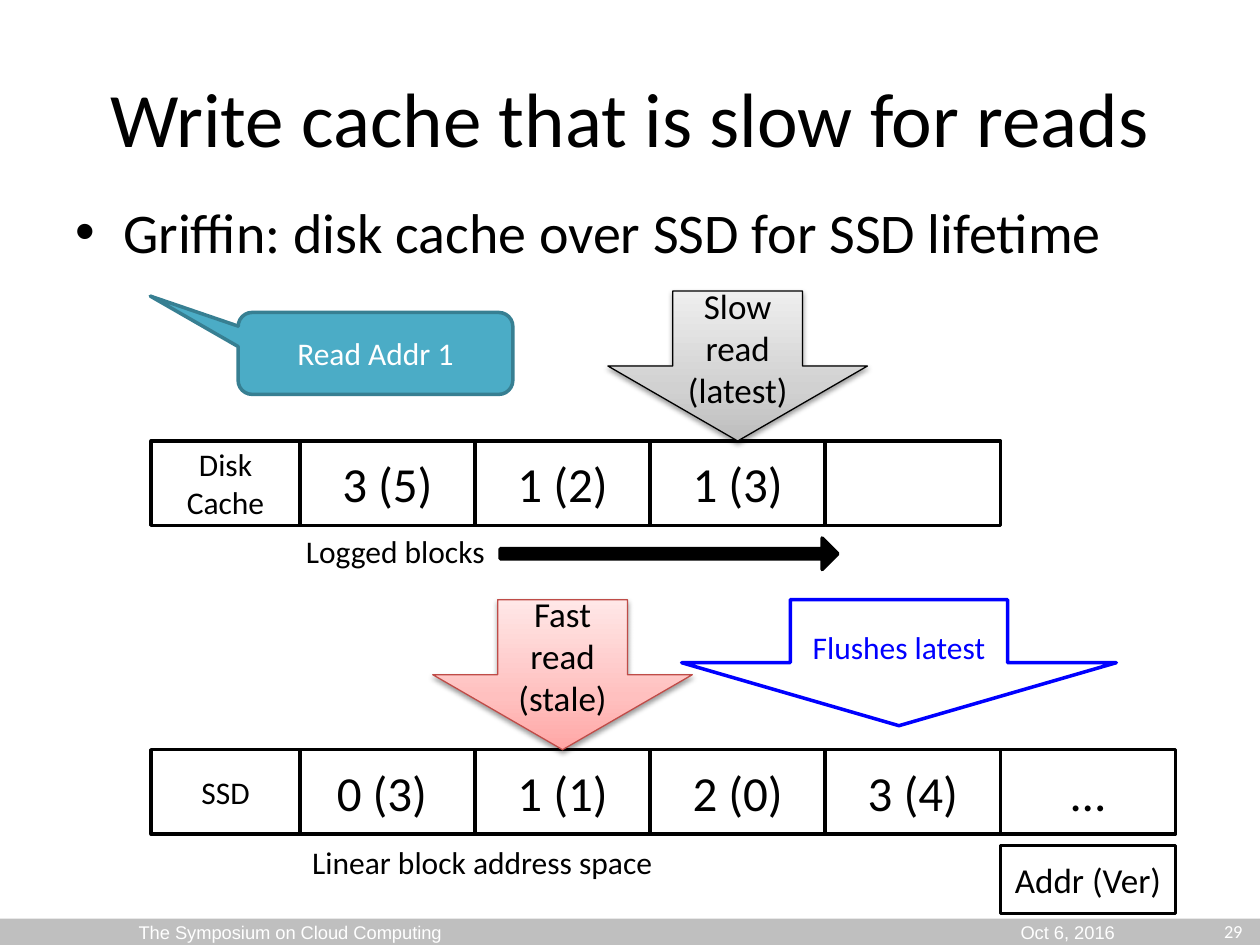
from copy import deepcopy
from dataclasses import dataclass

from lxml import etree
from pptx import Presentation
from pptx.dml.color import RGBColor
from pptx.enum.shapes import MSO_SHAPE
from pptx.enum.text import MSO_ANCHOR, PP_ALIGN
from pptx.oxml.ns import qn
from pptx.util import Inches, Pt

RECT, DOWN = MSO_SHAPE.RECTANGLE, MSO_SHAPE.DOWN_ARROW
RIGHT_ARROW, CALLOUT = MSO_SHAPE.RIGHT_ARROW, MSO_SHAPE.ROUNDED_RECTANGULAR_CALLOUT
LEFT, CENTER, RIGHT = PP_ALIGN.LEFT, PP_ALIGN.CENTER, PP_ALIGN.RIGHT
TOP, MIDDLE = MSO_ANCHOR.TOP, MSO_ANCHOR.MIDDLE


@dataclass(frozen=True)
class Theme:
    font: str = "Calibri"
    footer_font: str = "Arial"
    black: str = "000000"
    white: str = "FFFFFF"
    bar: str = "BFBFBF"
    flush: str = "0000FF"
    callout: str = "4BACC6"
    callout_line: str = "377F92"
    stale_line: str = "BF4C48"
    grey: tuple = ("BDBDBD", "D1D1D1", "EEEEEE")
    pink: tuple = ("FFA6A5", "FFC0BF", "FFE7E7")
    title: float = 44
    body: float = 32
    cell: float = 28
    note: float = 20
    label: float = 18
    footer: float = 10.5


T = Theme()
W, H = 10, 7.5
# Block grid: a label column, then equal block columns
LABEL_W, COL, ROW = 1.18, 1.39, 0.67
GRID_X, DISK_Y, SSD_Y = 2.38, 3.5, 5.95


def rgb(value):
    return RGBColor.from_string(value)


def block_box(col, y):
    return GRID_X + col * COL, y, COL, ROW


def write(s, lines, size, color=T.black, align=CENTER, anchor=MIDDLE,
          font=T.font, wrap=True):
    tf = s.text_frame
    tf.word_wrap, tf.vertical_anchor = wrap, anchor
    for i, line in enumerate(lines):
        p = tf.paragraphs[0] if i == 0 else tf.add_paragraph()
        p.alignment = align
        r = p.add_run()
        r.text = line
        r.font.size, r.font.name = Pt(size), font
        r.font.color.rgb = rgb(color)


def add_text(sp, box, line, size, **style):
    s = sp.add_textbox(*map(Inches, box))
    write(s, [line], size, **style)
    return s


def add_box(sp, kind, box, fill=T.white, line=T.black, weight=2):
    s = sp.add_shape(kind, *map(Inches, box))
    s.shadow.inherit = False
    s.fill.solid()
    s.fill.fore_color.rgb = rgb(fill)
    if line:
        s.line.color.rgb = rgb(line)
        s.line.width = Pt(weight)
    else:
        s.line.fill.background()
    return s


def shade(s, colors):
    """Three-stop gradient running upward, with a soft shadow below."""
    s.fill.gradient()
    s.fill.gradient_angle = 90
    props = s.element.spPr
    stops = props.find(".//" + qn("a:gsLst"))
    stops.append(deepcopy(stops[0]))
    for stop, position, color in zip(s.fill.gradient_stops, (0, 0.35, 1), colors):
        stop.position = position
        stop.color.rgb = rgb(color)
    shadow = etree.SubElement(props.find(qn("a:effectLst")), qn("a:outerShdw"),
                              blurRad=str(Pt(3.1)), dist=str(Pt(1.6)),
                              dir="5400000", rotWithShape="0")
    tint = etree.SubElement(shadow, qn("a:srgbClr"), val=T.black)
    etree.SubElement(tint, qn("a:alpha"), val="38000")


def footer(sp, box):
    x, y, w, h = box
    s = add_box(sp, RECT, box, fill=T.bar, line=None)
    s.text_frame.margin_left = Inches(0.11 * w)
    write(s, ["The Symposium on Cloud Computing\tOct 6, 2016"], T.footer,
          color=T.white, align=LEFT, font=T.footer_font)
    tabs = etree.SubElement(s.text_frame.paragraphs[0]._p.get_or_add_pPr(),
                            qn("a:tabLst"))
    etree.SubElement(tabs, qn("a:tab"), pos=str(Inches(0.7 * w)), algn="l")
    add_text(sp, (x + w - 2.37, y - 0.1, 2.33, 0.4), "29", T.footer,
             color=T.white, align=RIGHT)


def heading(sp, box):
    x, y, w, h = box
    add_text(sp, (x, y, w, 1.25), "Write cache that is slow for reads", T.title)
    s = add_text(sp, (x, y + 1.22, w, h - 1.22),
                 "Griffin: disk cache over SSD for SSD lifetime", T.body,
                 align=LEFT, anchor=TOP)
    props = s.text_frame.paragraphs[0]._p.get_or_add_pPr()
    props.set("marL", str(Inches(0.38)))
    props.set("indent", str(-Inches(0.38)))
    etree.SubElement(props, qn("a:buFont"), typeface=T.footer_font)
    etree.SubElement(props, qn("a:buChar"), char="•")


def block_row(sp, y, name, blocks):
    label = add_box(sp, RECT, (GRID_X - LABEL_W, y, LABEL_W, ROW))
    write(label, [name], T.label)
    for col, block in enumerate(blocks):
        s = add_box(sp, RECT, block_box(col, y))
        if block:
            write(s, [block], T.cell)


def read_arrow(sp, target, lines, colors, line):
    """Arrow whose tip rests on the middle of the target block."""
    x, y, w, _ = target
    aw, ah = 2.06, 1.19
    s = add_box(sp, DOWN, (x + (w - aw) / 2, y - ah, aw, ah), line=line, weight=0.75)
    shade(s, colors)
    write(s, lines, T.note)


def request(sp, box):
    s = add_box(sp, CALLOUT, box, fill=T.callout, line=T.callout_line)
    for i, value in enumerate((-0.82, -0.7, 0.17)):
        s.adjustments[i] = value
    write(s, ["Read Addr 1"], T.label, color=T.white)


def log_direction(sp, box):
    x, y, w, h = box
    text_w = 1.64
    add_text(sp, (x, y, text_w, h), "Logged blocks", T.label,
             align=LEFT, anchor=TOP, wrap=False)
    s = add_box(sp, RIGHT_ARROW, (x + text_w, y + 0.1, w - text_w, 0.25), fill=T.black)
    s.adjustments[0] = 0.32


def flush(sp, box):
    s = add_box(sp, DOWN, box, line=T.flush)
    write(s, ["Flushes latest"], T.label, color=T.flush)


def address_notes(sp, y):
    add_text(sp, (GRID_X, y, 2.93, 0.4), "Linear block address space", T.label,
             align=LEFT, anchor=TOP, wrap=False)
    x, _, w, _ = block_box(4, y)
    s = add_box(sp, RECT, (x, y + 0.07, w, 0.54))
    write(s, ["Addr (Ver)"], T.note)


def main():
    prs = Presentation()
    prs.slide_width, prs.slide_height = Inches(W), Inches(H)
    sp = prs.slides.add_slide(prs.slide_layouts[6]).shapes

    # Frame of the slide
    footer(sp, (0, H - 0.21, W, 0.21))
    heading(sp, (0.05 * W, 0.04 * H, 0.9 * W, 6.17))

    # SSD with its flush and address notes
    flush(sp, (5.41, 4.76, 3.45, 1))
    block_row(sp, SSD_Y, "SSD", ["0 (3) ", "1 (1)", "2 (0)", "3 (4)", "…"])
    address_notes(sp, SSD_Y + ROW + 0.02)

    # Disk cache with its log direction
    block_row(sp, DISK_Y, "Disk Cache", ["3 (5)", "1 (2)", "1 (3)", ""])
    log_direction(sp, (GRID_X - 0.05, DISK_Y + ROW, 4.32, 0.4))

    # Reads of address 1
    read_arrow(sp, block_box(2, DISK_Y), ["Slow read", "(latest)"], T.grey, T.black)
    read_arrow(sp, block_box(1, SSD_Y), ["Fast", "read", "(stale)"], T.pink, T.stale_line)
    request(sp, (1.89, 2.48, 2.18, 0.65))

    prs.save("out.pptx")


if __name__ == "__main__":
    main()
